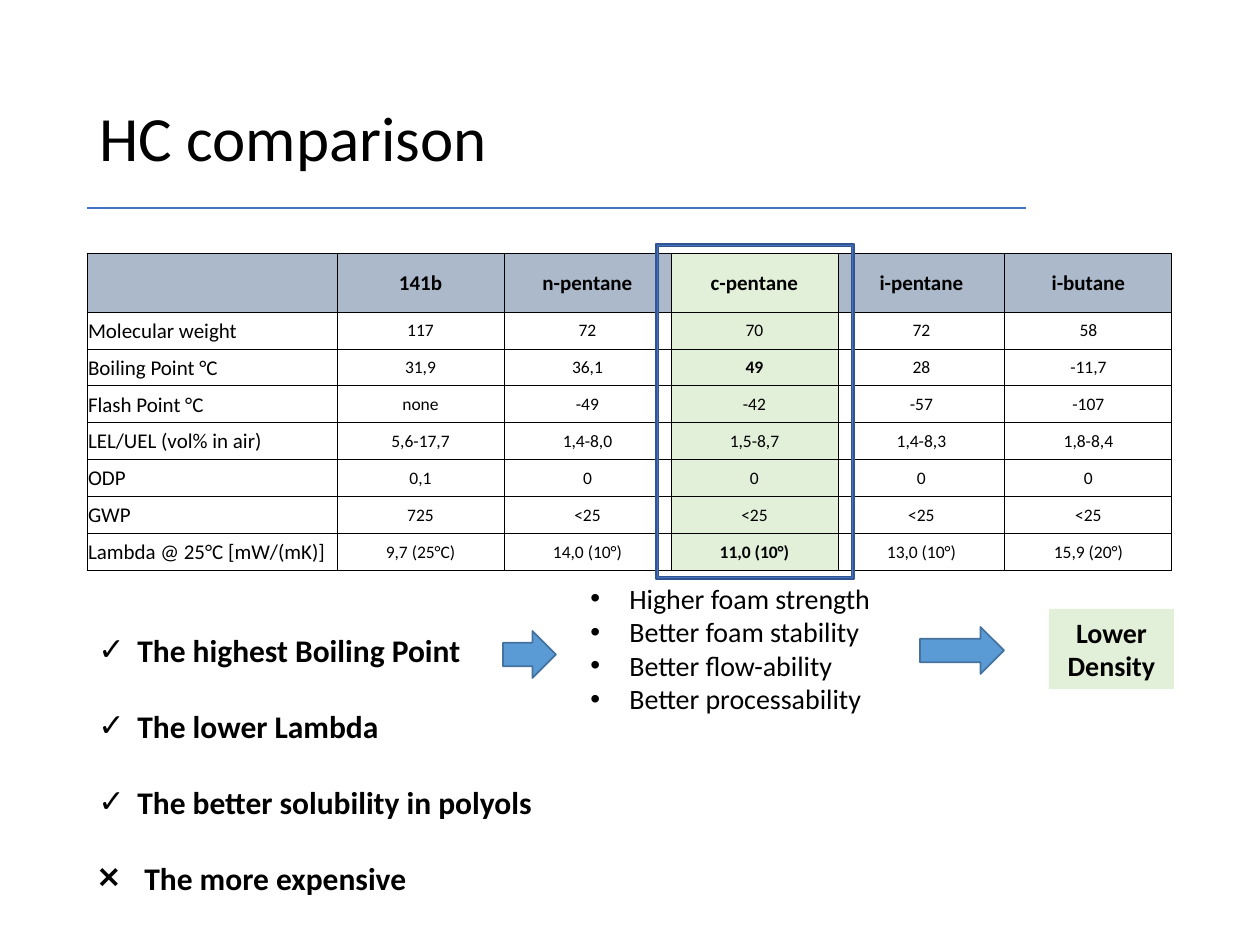
import pptx
import pptx.dml.color
import pptx.enum.shapes
import pptx.enum.text
import pptx.oxml
import pptx.oxml.ns
import pptx.util
from lxml import etree

RGBColor = pptx.dml.color.RGBColor
Shapes = pptx.enum.shapes.MSO_SHAPE
Align = pptx.enum.text.PP_ALIGN
Anchor = pptx.enum.text.MSO_ANCHOR
AutoSize = pptx.enum.text.MSO_AUTO_SIZE
qn = pptx.oxml.ns.qn

PX = 914400 // 126
FONT = "Calibri"
BLACK = RGBColor(0x00, 0x00, 0x00)
HEADER_BLUE = RGBColor(0xAC, 0xB9, 0xCA)
LIGHT_GREEN = RGBColor(0xE2, 0xF0, 0xD9)
ACCENT_BLUE = RGBColor(0x44, 0x72, 0xC4)
FRAME_EDGE = RGBColor(0x32, 0x54, 0x91)
ARROW_BLUE = RGBColor(0x5B, 0x9B, 0xD5)
ARROW_EDGE = RGBColor(0x43, 0x73, 0x9E)

HIGHLIGHT_COLUMN = 3
BOLD_CELLS = {(2, HIGHLIGHT_COLUMN), (7, HIGHLIGHT_COLUMN)}
PROPERTIES = [
    ["", "141b", "n-pentane", "c-pentane", "i-pentane", "i-butane"],
    ["Molecular weight", "117", "72", "70", "72", "58"],
    ["Boiling Point °C", "31,9", "36,1", "49", "28", "-11,7"],
    ["Flash Point °C", "none", "-49", "-42", "-57", "-107"],
    ["LEL/UEL (vol% in air)", "5,6-17,7", "1,4-8,0", "1,5-8,7", "1,4-8,3", "1,8-8,4"],
    ["ODP", "0,1", "0", "0", "0", "0"],
    ["GWP", "725", "<25", "<25", "<25", "<25"],
    ["Lambda @ 25°C [mW/(mK)]", "9,7 (25°C)", "14,0 (10°)", "11,0 (10°)", "13,0 (10°)", "15,9 (20°)"],
]
CONCLUSIONS = [
    ("✓", "The highest Boiling Point", 39),
    ("✓", "The lower Lambda", 39),
    ("✓", "The better solubility in polyols", 39),
    ("❌", "The more expensive", 46),
]
BENEFITS = [
    "Higher foam strength",
    "Better foam stability",
    "Better flow-ability",
    "Better processability",
]


def box(*lengths):
    return [length * PX for length in lengths]


def set_font(paragraph, size, bold=False):
    font = paragraph.font
    font.name = FONT
    font.size = pptx.util.Pt(size)
    font.bold = bold
    font.color.rgb = BLACK


def add_bullet(paragraph, character, indent):
    properties = paragraph._p.get_or_add_pPr()
    properties.set("marL", str(indent * PX))
    properties.set("indent", str(-indent * PX))
    bullet_font = etree.SubElement(properties, qn("a:buFont"))
    bullet_font.set("typeface", "Arial")
    bullet = etree.SubElement(properties, qn("a:buChar"))
    bullet.set("char", character)


def add_text(slide, place, lines, size, bold=False, bullet=None, indent=39):
    shape = slide.shapes.add_textbox(*box(*place))
    frame = shape.text_frame
    frame.word_wrap = True
    frame.text = "\n".join(lines)
    for paragraph in frame.paragraphs:
        if bullet:
            add_bullet(paragraph, bullet, indent)
        set_font(paragraph, size, bold)
    return shape


def add_shape(slide, kind, place, fill, edge=None):
    shape = slide.shapes.add_shape(kind, *box(*place))
    shape.shadow.inherit = False
    shape.fill.solid()
    shape.fill.fore_color.rgb = fill
    if edge is None:
        shape.line.fill.background()
    else:
        shape.line.color.rgb = edge
        shape.line.width = pptx.util.Pt(1)
    return shape


def add_rule(slide, left, right, top):
    rule = slide.shapes.add_connector(
        pptx.enum.shapes.MSO_CONNECTOR.STRAIGHT, *box(left, top, right, top)
    )
    rule.line.color.rgb = ACCENT_BLUE
    rule.line.width = pptx.util.Pt(1)
    etree.SubElement(rule._element.spPr, qn("a:effectLst"))


def add_cell_borders(cell):
    properties = cell._tc.get_or_add_tcPr()
    for side in ("a:lnL", "a:lnR", "a:lnT", "a:lnB"):
        border = etree.SubElement(properties, qn(side), w=str(pptx.util.Pt(0.5)))
        fill = etree.SubElement(border, qn("a:solidFill"))
        etree.SubElement(fill, qn("a:srgbClr"), val=str(BLACK))


def format_cell(cell, row, column, text):
    add_cell_borders(cell)
    cell.margin_left = cell.margin_right = cell.margin_top = PX
    cell.margin_bottom = 0
    cell.vertical_anchor = Anchor.MIDDLE
    if column == HIGHLIGHT_COLUMN or row == 0:
        cell.fill.solid()
        cell.fill.fore_color.rgb = LIGHT_GREEN if column == HIGHLIGHT_COLUMN else HEADER_BLUE
    else:
        cell.fill.background()
    cell.text = text
    paragraph = cell.text_frame.paragraphs[0]
    paragraph.alignment = Align.CENTER if column else Align.LEFT
    size = 12 if row == 0 or column == 0 else 10
    set_font(paragraph, size, row == 0 or (row, column) in BOLD_CELLS)


def add_property_table(slide):
    widths = [250] + [167] * 5
    heights = [59] + [37] * 7
    table = slide.shapes.add_table(
        len(heights), len(widths), *box(87, 253, sum(widths), sum(heights))
    ).table
    table.first_row = False
    table.horz_banding = False
    for column, width in zip(table.columns, widths):
        column.width = width * PX
    for row, height in zip(table.rows, heights):
        row.height = height * PX
    for row, texts in enumerate(PROPERTIES):
        for column, text in enumerate(texts):
            format_cell(table.cell(row, column), row, column, text)


def add_title(slide):
    title = add_text(slide, (87, 50, 1086, 183), ["HC comparison"], 36)
    title.text_frame.vertical_anchor = Anchor.MIDDLE
    title.text_frame.paragraphs[0].line_spacing = 0.9


def add_density_label(slide):
    label = add_shape(slide, Shapes.RECTANGLE, (1049, 609, 125, 80), LIGHT_GREEN)
    frame = label.text_frame
    frame.word_wrap = True
    frame.auto_size = AutoSize.SHAPE_TO_FIT_TEXT
    frame.text = "Lower Density"
    frame.paragraphs[0].alignment = Align.CENTER
    set_font(frame.paragraphs[0], 16, True)


def main():
    presentation = pptx.Presentation()
    presentation.slide_width, presentation.slide_height = box(1260, 945)
    slide = presentation.slides.add_slide(presentation.slide_layouts[6])

    add_rule(slide, 87, 1026, 208)
    add_title(slide)
    add_property_table(slide)
    for index, (mark, text, indent) in enumerate(CONCLUSIONS):
        place = (86, 625 + 76 * index, 481, 50)
        add_text(slide, place, [text], 18, True, mark, indent)
    add_text(slide, (578, 575, 318, 149), BENEFITS, 16, bullet="•")
    add_density_label(slide)
    for place in ((503, 631, 53, 47), (920, 627, 84, 47)):
        add_shape(slide, Shapes.RIGHT_ARROW, place, ARROW_BLUE, ARROW_EDGE)
    highlight = add_shape(slide, Shapes.FRAME, (656, 244, 198, 335), ACCENT_BLUE, FRAME_EDGE)
    highlight.adjustments[0] = 0.013

    presentation.save("out.pptx")


if __name__ == "__main__":
    main()
